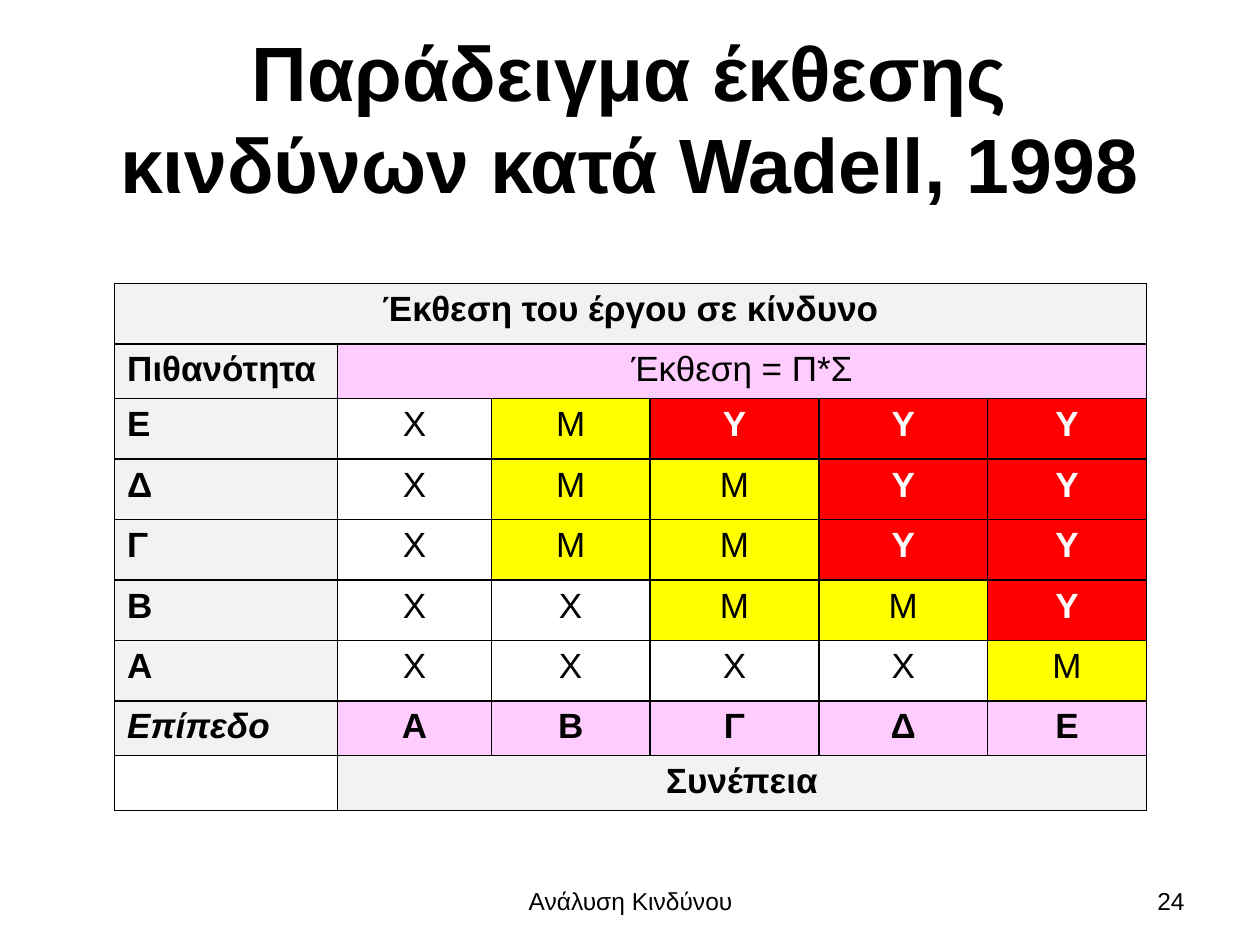
import dataclasses

import lxml.etree
import pptx
import pptx.dml.color
import pptx.enum.text
import pptx.oxml.ns
import pptx.util

ALIGN = pptx.enum.text.PP_ALIGN
ANCHOR = pptx.enum.text.MSO_ANCHOR


@dataclasses.dataclass(frozen=True)
class Theme:
    """Colours, font and type sizes of the slide."""
    font: str = "Arial"
    ink: str = "000000"
    paper: str = "FFFFFF"
    grey: str = "F2F2F2"
    pink: str = "FFCCFF"
    yellow: str = "FFFF00"
    red: str = "FF0000"
    title: int = 44
    body: int = 20
    footer: int = 14


T = Theme()
LEVELS = "ΑΒΓΔΕ"
EXPOSURE = ("ΧΜΥΥΥ", "ΧΜΜΥΥ", "ΧΜΜΥΥ", "ΧΧΜΜΥ", "ΧΧΧΧΜ")
RATINGS = {
    "Χ": dict(fill=T.paper),
    "Μ": dict(fill=T.yellow),
    "Υ": dict(fill=T.red, color=T.paper, bold=True),
}
COLS = (177, 122, 126, 134, 134, 126)
ROWS = (48, 41, 48, 48, 48, 48, 48, 41, 41)


def rgb(value):
    """Return the colour object for a hex string."""
    return pptx.dml.color.RGBColor.from_string(value)


def share(prs, x, y, w, h):
    """Turn percentages of the slide size into a box of lengths."""
    W, H = prs.slide_width, prs.slide_height
    return [round(v * n / 100) for v, n in ((x, W), (y, H), (w, W), (h, H))]


def write(tf, text, size=T.body, color=T.ink, bold=False, italic=False, align=ALIGN.CENTER):
    """Write formatted text into the first paragraph of a frame."""
    p = tf.paragraphs[0]
    p.alignment = align
    r = p.add_run()
    r.text = text
    r.font.name, r.font.size = T.font, pptx.util.Pt(size)
    r.font.bold, r.font.italic = bold, italic
    r.font.color.rgb = rgb(color)


def add_label(s, box, text, **fmt):
    """Place a line of text, centred vertically in its box."""
    tf = s.shapes.add_textbox(*box).text_frame
    tf.word_wrap = True
    tf.vertical_anchor = ANCHOR.MIDDLE
    write(tf, text, **fmt)


def add_borders(cell):
    """Draw a one-point line on every side of a cell."""
    tag = pptx.oxml.ns.qn
    tcPr = cell._tc.get_or_add_tcPr()
    for side in ("a:lnL", "a:lnR", "a:lnT", "a:lnB"):
        ln = lxml.etree.SubElement(tcPr, tag(side), w=str(pptx.util.Pt(1)))
        fill = lxml.etree.SubElement(ln, tag("a:solidFill"))
        lxml.etree.SubElement(fill, tag("a:srgbClr"), val=T.ink)


def set_cell(cell, text, fill, **fmt):
    """Fill a cell and write its text."""
    cell.fill.solid()
    cell.fill.fore_color.rgb = rgb(fill)
    write(cell.text_frame, text, **fmt)


def add_matrix(s, box):
    """Build the risk exposure table inside its box."""
    x, y, w, h = box
    table = s.shapes.add_table(len(ROWS), len(COLS), x, y, w, h).table
    table.first_row = table.horz_banding = False
    for col, part in zip(table.columns, COLS):
        col.width = round(w * part / sum(COLS))
    for row, part in zip(table.rows, ROWS):
        row.height = round(h * part / sum(ROWS))
    for cell in table.iter_cells():
        add_borders(cell)
    cell, last, bottom = table.cell, len(COLS) - 1, len(ROWS) - 1
    for r, c in ((0, 0), (1, 1), (bottom, 1)):
        cell(r, c).merge(cell(r, last))

    side = dict(fill=T.grey, bold=True, align=ALIGN.LEFT)
    set_cell(cell(0, 0), "Έκθεση του έργου σε κίνδυνο", T.grey, bold=True)
    set_cell(cell(1, 0), "Πιθανότητα", **side)
    set_cell(cell(1, 1), "Έκθεση = Π*Σ", T.pink)
    for r, (level, ratings) in enumerate(zip(reversed(LEVELS), EXPOSURE), 2):
        set_cell(cell(r, 0), level, **side)
        for c, rating in enumerate(ratings, 1):
            set_cell(cell(r, c), rating, **RATINGS[rating])
    set_cell(cell(bottom - 1, 0), "Επίπεδο", italic=True, **side)
    for c, level in enumerate(LEVELS, 1):
        set_cell(cell(bottom - 1, c), level, T.pink, bold=True)
    set_cell(cell(bottom, 0), "", T.paper)
    set_cell(cell(bottom, 1), "Συνέπεια", T.grey, bold=True)


def main():
    """Build the slide and save it."""
    prs = pptx.Presentation()
    prs.slide_width, prs.slide_height = pptx.util.Inches(10), pptx.util.Inches(7.5)
    s = prs.slides.add_slide(prs.slide_layouts[6])
    add_label(s, share(prs, 5, 4, 90, 16.67),
              "Παράδειγμα έκθεσης κινδύνων κατά Wadell, 1998", size=T.title, bold=True)
    add_matrix(s, share(prs, 9.1, 30, 81.9, 54.8))
    add_label(s, share(prs, 34.2, 92.67, 31.7, 5.33), "Ανάλυση Κινδύνου", size=T.footer)
    add_label(s, share(prs, 71.7, 92.67, 23.3, 5.33), "24", size=T.footer, align=ALIGN.RIGHT)
    prs.save("out.pptx")


if __name__ == "__main__":
    main()
